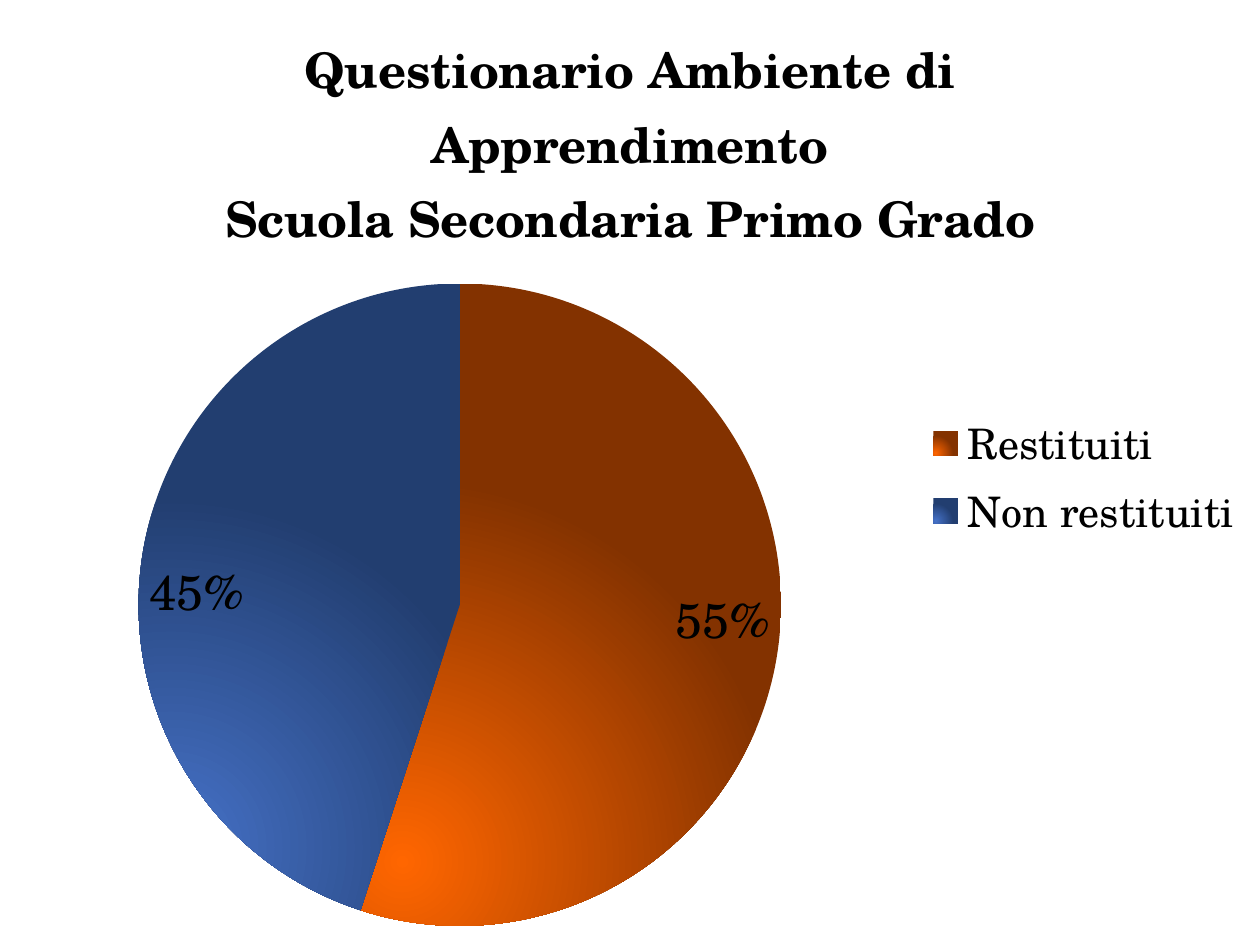
from lxml.etree import SubElement
from pptx import Presentation
from pptx.chart.data import CategoryChartData
from pptx.dml.color import RGBColor
from pptx.enum.chart import XL_CHART_TYPE, XL_LABEL_POSITION, XL_LEGEND_POSITION
from pptx.enum.text import PP_ALIGN
from pptx.oxml.ns import qn
from pptx.util import Inches, Pt

FONT = "TeX Gyre Schola"
TITLE = ["Questionario Ambiente di Apprendimento", "Scuola Secondaria Primo Grado"]
# category, percentage, bright colour, dark colour
SLICES = [
    ("Restituiti", 55, "FF6600", "833200"),
    ("Non restituiti", 45, "4672C8", "223E70"),
]
# fractions of the chart area: left, top, width, height
PIE_AREA = (0.11, 0.3, 0.51, 0.68)
LEGEND_AREA = (0.73, 0.43, 0.26, 0.15)


def color(value):
    return RGBColor.from_string(value)


def style(font, size, bold=False):
    font.name = FONT
    font.size = Pt(size)
    font.bold = bold
    font.color.rgb = color("000000")


def set_layout(parent, area, inner=False):
    """Place a chart part by hand, in fractions of the chart area."""
    layout = parent.find(qn("c:layout"))
    if layout is None:
        layout = SubElement(parent, qn("c:layout"))
        first = parent.find(qn("c:legendPos"))
        if first is None:
            parent.insert(0, layout)
        else:
            first.addnext(layout)
    manual = SubElement(layout, qn("c:manualLayout"))
    settings = [("layoutTarget", "inner")] if inner else []
    settings += [("xMode", "edge"), ("yMode", "edge")]
    settings += zip("xywh", map(str, area))
    for name, value in settings:
        SubElement(manual, qn(f"c:{name}")).set("val", value)


def fill_radial(point, bright, dark):
    """Fill a slice with a glow that starts at its lower left corner."""
    fill = point.format.fill
    fill.gradient()
    for stop, value, position in zip(fill.gradient_stops, (bright, dark), (0, 1)):
        stop.color.rgb = color(value)
        stop.position = position
    point.format.line.fill.background()


deck = Presentation()
deck.slide_width, deck.slide_height = Inches(10), Inches(7.5)
page = deck.slides.add_slide(deck.slide_layouts[6])

data = CategoryChartData()
data.categories = [name for name, *_ in SLICES]
data.add_series("Series 1", [value for _, value, *_ in SLICES])
chart = page.shapes.add_chart(
    XL_CHART_TYPE.PIE, 0, 0, deck.slide_width, deck.slide_height, data
).chart
style(chart.font, 10)

title = chart.chart_title.text_frame
for index, line in enumerate(TITLE):
    para = title.add_paragraph() if index else title.paragraphs[0]
    para.alignment = PP_ALIGN.CENTER
    span = para.add_run()
    span.text = line
    style(span.font, 28, bold=True)
chart.chart_title.include_in_layout = False

plot = chart.plots[0]
plot.vary_by_categories = True
series = plot.series[0]
for index, (_, _, bright, dark) in enumerate(SLICES):
    fill_radial(series.points[index], bright, dark)
for gradient in series._element.iter(qn("a:gradFill")):
    linear = gradient.find(qn("a:lin"))
    if linear is not None:
        gradient.remove(linear)
    circle = SubElement(gradient, qn("a:path"))
    circle.set("path", "circle")
    center = SubElement(circle, qn("a:fillToRect"))
    for side, value in {"l": 10, "t": 90, "r": 90, "b": 10}.items():
        center.set(side, str(value * 1000))

labels = series.data_labels
labels.show_percentage = True
labels.show_value = False
labels.number_format = "0%"
labels.number_format_is_linked = False
labels.position = XL_LABEL_POSITION.INSIDE_END
style(labels.font, 28)

chart.has_legend = True
legend = chart.legend
legend.position = XL_LEGEND_POSITION.RIGHT
legend.include_in_layout = False
style(legend.font, 24)

set_layout(chart._chartSpace.chart.plotArea, PIE_AREA, inner=True)
set_layout(legend._element, LEGEND_AREA)

deck.save("out.pptx")
